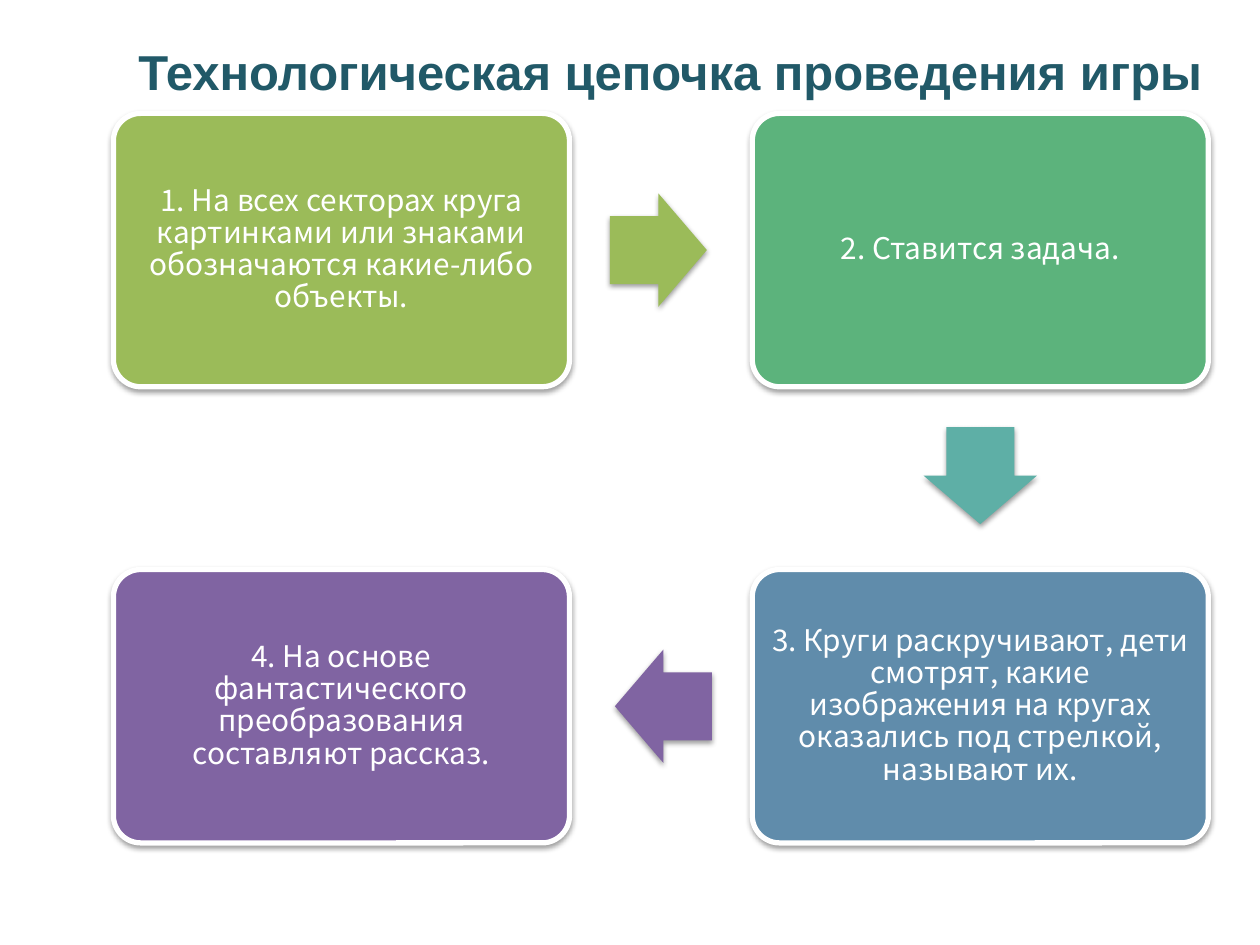
from math import cos, radians, sin

from lxml.etree import SubElement
from pptx import Presentation
from pptx.dml.color import RGBColor
from pptx.enum.shapes import MSO_SHAPE
from pptx.enum.text import MSO_ANCHOR, PP_ALIGN
from pptx.oxml.ns import qn
from pptx.util import Inches, Pt

COLORS = {
    "title": "215968",
    "white": "FFFFFF",
    "shadow": "000000",
    "olive": "9BBB59",
    "green": "5CB37C",
    "teal": "5EAFA6",
    "blue": "608CAB",
    "purple": "8064A2",
}
STEP_SIZE = (3.62, 2.17)
ARROW_SIZE = (0.77, 0.9)
ARROW_SETBACK = 0.02
LEFT, RIGHT = 0.9, 5.97
TOP, BOTTOM = 0.9, 4.52

STEPS = [
    (LEFT, TOP, "olive",
     "1. На всех секторах круга картинками или знаками обозначаются какие-либо объекты."),
    (RIGHT, TOP, "green", "2. Ставится задача."),
    (RIGHT, BOTTOM, "blue",
     "3. Круги раскручивают, дети смотрят, какие изображения на кругах "
     "оказались под стрелкой, называют их."),
    (LEFT, BOTTOM, "purple",
     "4. На основе фантастического преобразования составляют рассказ."),
]
ARROWS = [("olive", 0), ("teal", 90), ("purple", 180)]

TITLE_FONT = {"name": "Arial", "size": Pt(28), "bold": True}
STEP_FONT = {"name": "Noto Sans CJK KR", "size": Pt(17)}
STEP_FRAME = {
    "word_wrap": True,
    "vertical_anchor": MSO_ANCHOR.MIDDLE,
    "margin_left": Inches(0.07),
    "margin_right": Inches(0.07),
    "margin_top": Inches(0.07),
    "margin_bottom": Inches(0.07),
}
STEP_PARAGRAPH = {"alignment": PP_ALIGN.CENTER, "line_spacing": 0.9}


def apply_format(target, values):
    for name, value in values.items():
        setattr(target, name, value)


def color(name):
    return RGBColor.from_string(COLORS[name])


def write(paragraph, text, font, color_name):
    run = paragraph.add_run()
    run.text = text
    apply_format(run.font, font)
    run.font.color.rgb = color(color_name)


def add_filled(slide, preset, box, fill, adjustments):
    shape = slide.shapes.add_shape(preset, *map(Inches, box))
    shape.fill.solid()
    shape.fill.fore_color.rgb = color(fill)
    for index, value in enumerate(adjustments):
        shape.adjustments[index] = value
    shape.shadow.inherit = False
    effects = shape._element.spPr.find(qn("a:effectLst"))
    shadow = SubElement(effects, qn("a:outerShdw"), blurRad=str(Pt(3.1)),
                        dist=str(Pt(1.6)), dir="5400000", rotWithShape="0")
    tint = SubElement(shadow, qn("a:srgbClr"), val=COLORS["shadow"])
    SubElement(tint, qn("a:alpha"), val="38000")
    return shape


def add_title(slide, box):
    title = slide.shapes.add_textbox(*map(Inches, box))
    frame = title.text_frame
    apply_format(frame, {"word_wrap": True, "vertical_anchor": MSO_ANCHOR.MIDDLE})
    write(frame.paragraphs[0], "Технологическая цепочка проведения игры",
          TITLE_FONT, "title")


def add_step(slide, box, fill, text):
    step = add_filled(slide, MSO_SHAPE.ROUNDED_RECTANGLE, box, fill, [0.1])
    step.line.color.rgb = color("white")
    step.line.width = Pt(3)
    apply_format(step.text_frame, STEP_FRAME)
    paragraph = step.text_frame.paragraphs[0]
    apply_format(paragraph, STEP_PARAGRAPH)
    write(paragraph, text, STEP_FONT, "white")


def add_arrow(slide, start, end, fill, angle):
    width, height = ARROW_SIZE
    center_x = (start[0] + end[0] + STEP_SIZE[0]) / 2 - ARROW_SETBACK * cos(radians(angle))
    center_y = (start[1] + end[1] + STEP_SIZE[1]) / 2 - ARROW_SETBACK * sin(radians(angle))
    box = (center_x - width / 2, center_y - height / 2, width, height)
    arrow = add_filled(slide, MSO_SHAPE.RIGHT_ARROW, box, fill, [0.6, 0.5])
    arrow.line.fill.background()
    arrow.rotation = angle


def main():
    deck = Presentation()
    apply_format(deck, {"slide_width": Inches(10), "slide_height": Inches(7.5)})
    slide = deck.slides.add_slide(deck.slide_layouts[6])
    add_title(slide, (1, 0.22, 9, 0.69))
    for left, top, fill, text in STEPS:
        add_step(slide, (left, top, *STEP_SIZE), fill, text)
    for start, end, (fill, angle) in zip(STEPS, STEPS[1:], ARROWS):
        add_arrow(slide, start, end, fill, angle)
    deck.save("out.pptx")


if __name__ == "__main__":
    main()
